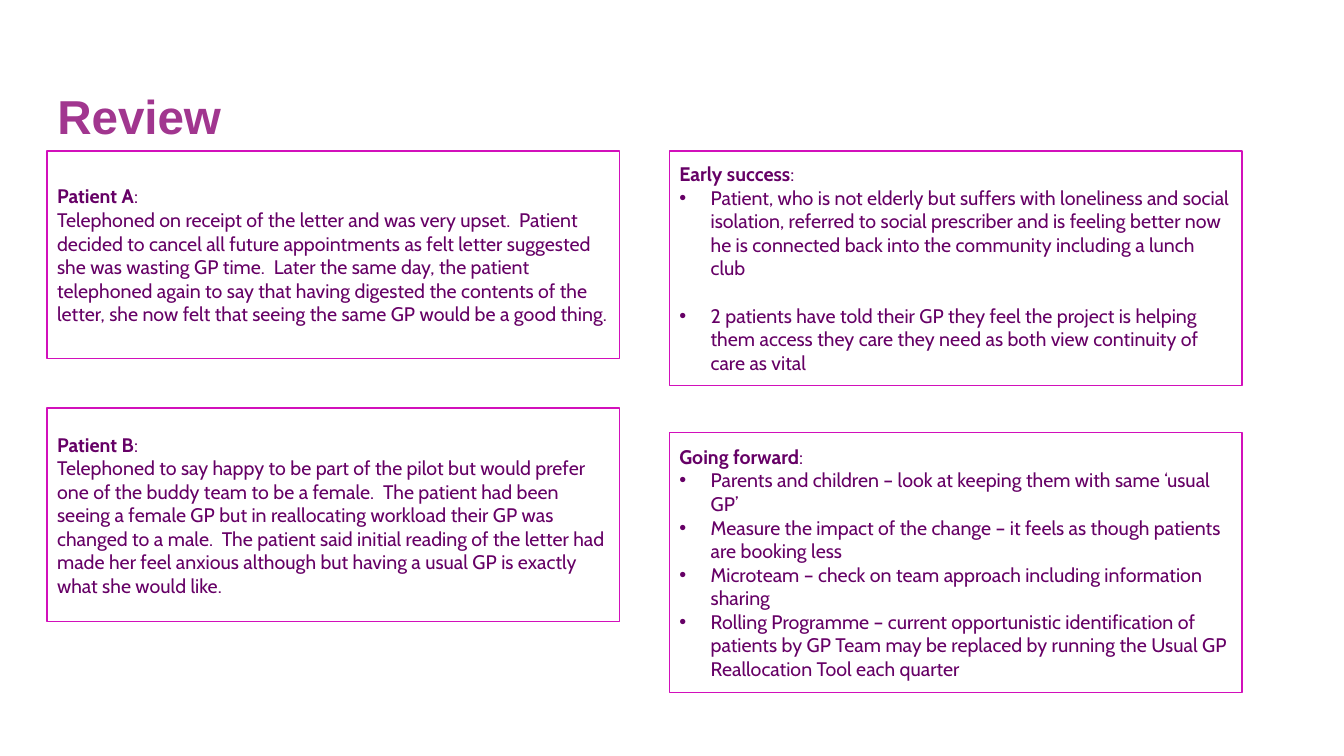
"""Build the Review slide: two patient stories, early success and next steps."""
from lxml import etree
from pptx import Presentation
from pptx import util as u
from pptx.dml.color import RGBColor
from pptx.enum import shapes, text
from pptx.oxml.ns import qn

HEADING_PURPLE = RGBColor(0xA1, 0x36, 0x8F)
TEXT_PURPLE = RGBColor(0x66, 0x00, 0x66)
BORDER_PINK = RGBColor(0xD2, 0x10, 0xBB)

LEFT_COLUMN, RIGHT_COLUMN = 1.19, 16.87
BOX_WIDTH = 14.43
BULLET_INDENT = u.Cm(0.79)

BOXES = [
    (LEFT_COLUMN, 3.81, 5.23, "Patient A", False, 0, [
        "Telephoned on receipt of the letter and was very upset.  Patient decided to "
        "cancel all future appointments as felt letter suggested she was wasting GP "
        "time.  Later the same day, the patient telephoned again to say that having "
        "digested the contents of the letter, she now felt that seeing the same GP "
        "would be a good thing.",
    ]),
    (LEFT_COLUMN, 10.28, 5.39, "Patient B", False, 0, [
        "Telephoned to say happy to be part of the pilot but would prefer one of the "
        "buddy team to be a female.  The patient had been seeing a female GP but in "
        "reallocating workload their GP was changed to a male.  The patient said "
        "initial reading of the letter had made her feel anxious although but having "
        "a usual GP is exactly what she would like.",
    ]),
    (RIGHT_COLUMN, 3.81, 5.9, "Early success", True, 17, [
        "Patient, who is not elderly but suffers with loneliness and social isolation, "
        "referred to social prescriber and is feeling better now he is connected back "
        "into the community including a lunch club",
        "2 patients have told their GP they feel the project is helping them access "
        "they care they need as both view continuity of care as vital",
    ]),
    (RIGHT_COLUMN, 10.9, 6.55, "Going forward", True, 0, [
        "Parents and children – look at keeping them with same ‘usual GP’",
        "Measure the impact of the change – it feels as though patients are booking less",
        "Microteam – check on team approach including information sharing",
        "Rolling Programme – current opportunistic identification of patients by GP Team "
        "may be replaced by running the Usual GP Reallocation Tool each quarter",
    ]),
]


def add_bullet(paragraph):
    properties = paragraph._p.get_or_add_pPr()
    properties.set("marL", str(BULLET_INDENT))
    properties.set("indent", str(-BULLET_INDENT))
    etree.SubElement(properties, qn("a:buFont")).set("typeface", "Arial")
    etree.SubElement(properties, qn("a:buChar")).set("char", "•")


def format_run(run, font_name, size, color, bold):
    run.font.name = font_name
    run.font.size = u.Pt(size)
    run.font.color.rgb = color
    run.font.bold = bold


presentation = Presentation()
presentation.slide_width = u.Cm(33.87)
presentation.slide_height = u.Cm(19.05)
slide = presentation.slides.add_slide(presentation.slide_layouts[5])

title = slide.shapes.title
title.left, title.top = u.Cm(LEFT_COLUMN), u.Cm(1.17)
title.width, title.height = u.Cm(13.16), u.Cm(3.68)
title.text_frame.text = "Review"
title.text_frame.vertical_anchor = text.MSO_ANCHOR.MIDDLE
heading = title.text_frame.paragraphs[0]
heading.alignment = text.PP_ALIGN.LEFT
heading.line_spacing = 0.9
format_run(heading.runs[0], "Arial", 34, HEADING_PURPLE, True)

for left, top, height, label, bulleted, gap, items in BOXES:
    box = slide.shapes.add_shape(shapes.MSO_SHAPE.RECTANGLE, u.Cm(left), u.Cm(top),
                                 u.Cm(BOX_WIDTH), u.Cm(height))
    box.shadow.inherit = False
    box.fill.background()
    box.line.color.rgb = BORDER_PINK
    box.line.width = u.Pt(1)
    frame = box.text_frame
    frame.word_wrap = True
    frame.vertical_anchor = text.MSO_ANCHOR.MIDDLE

    caption = frame.paragraphs[0]
    caption.alignment = text.PP_ALIGN.LEFT
    for words, bold in ((label, True), (":", False)):
        run = caption.add_run()
        run.text = words
        format_run(run, "Cabin", 14, TEXT_PURPLE, bold)

    for index, item in enumerate(items):
        paragraph = frame.add_paragraph()
        paragraph.text = item
        if bulleted:
            add_bullet(paragraph)
        paragraph.alignment = text.PP_ALIGN.LEFT
        if gap and index:
            paragraph.space_before = u.Pt(gap)
        format_run(paragraph.runs[0], "Cabin", 14, TEXT_PURPLE, False)

presentation.save("out.pptx")
